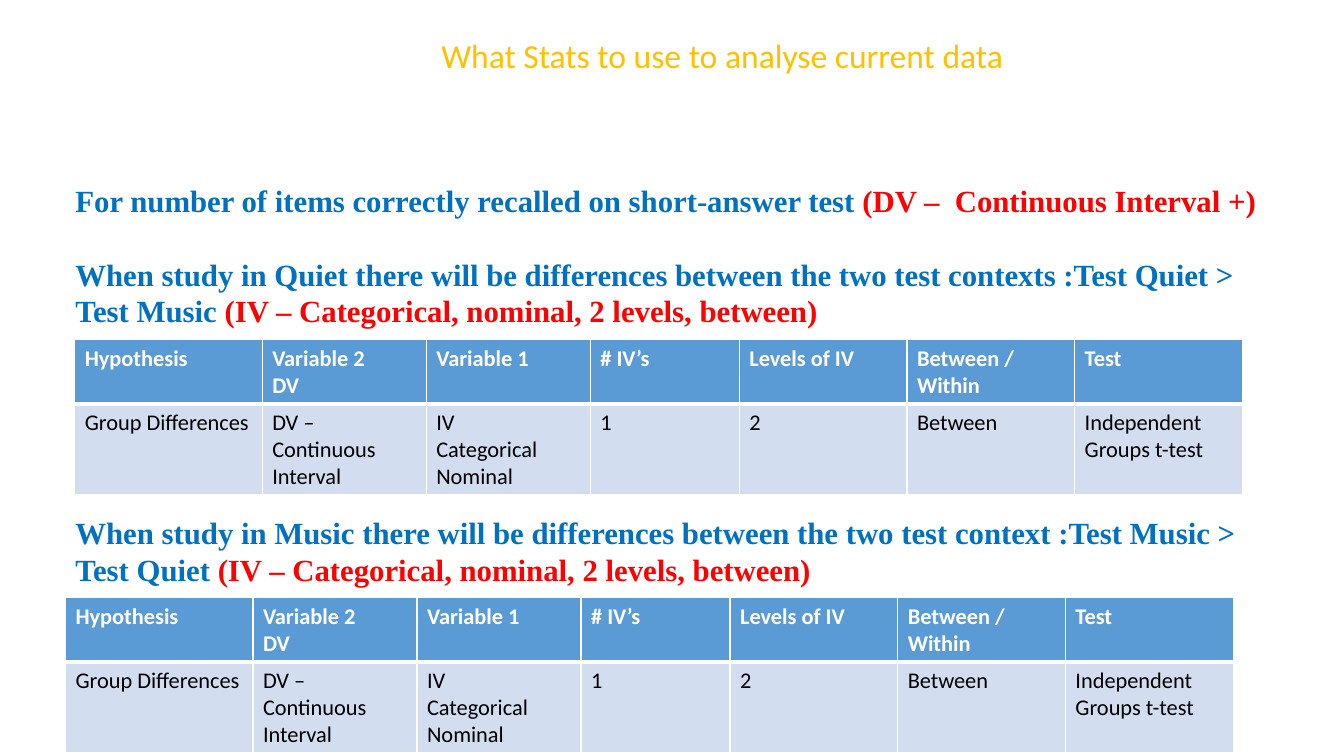
import pptx
import pptx.util
import pptx.dml.color
import pptx.enum.text
import pptx.oxml
import pptx.oxml.ns
from dataclasses import dataclass

Pt = pptx.util.Pt


@dataclass(frozen=True)
class Theme:
    title: str = "FFC000"
    hypothesis: str = "0070C0"
    variable: str = "FF0000"
    header_fill: str = "5B9BD5"
    body_fill: str = "D2DEEF"
    white: str = "FFFFFF"
    black: str = "000000"
    sans: str = "Calibri"
    serif: str = "Times New Roman"
    title_size: float = 24
    statement_size: float = 22
    statement_line: float = 26.4
    table_size: float = 16


theme = Theme()


def style(span, font, size, color, bold=False):
    span.font.name = font
    span.font.size = Pt(size)
    span.font.bold = bold
    span.font.color.rgb = pptx.dml.color.RGBColor.from_string(color)


def add_border(cell, side, width):
    properties = cell._tc.get_or_add_tcPr()
    properties.append(pptx.oxml.parse_xml(
        f'<a:{side} {pptx.oxml.ns.nsdecls("a")} w="{int(Pt(width))}">'
        f'<a:solidFill><a:srgbClr val="{theme.white}"/></a:solidFill></a:{side}>'
    ))


deck = pptx.Presentation()
deck.slide_width = Pt(960)
deck.slide_height = Pt(540)
page = deck.slides.add_slide(deck.slide_layouts[6])

statements = [
    (0, "For number of items correctly recalled on short-answer test ",
     "(DV –  Continuous Interval +)"),
    (1, "When study in Quiet there will be differences between the two test contexts :Test Quiet > Test Music ",
     "(IV – Categorical, nominal, 2 levels, between)"),
    (5, "When study in Music there will be differences between the two test context :Test Music > Test Quiet ",
     "(IV – Categorical, nominal, 2 levels, between)"),
]
box = page.shapes.add_textbox(Pt(46.8), Pt(126), Pt(874.8), Pt(300.2))
box.text_frame.word_wrap = True
for index, (lines_before, hypothesis, variable) in enumerate(statements):
    para = box.text_frame.paragraphs[0] if index == 0 else box.text_frame.add_paragraph()
    para.line_spacing = Pt(theme.statement_line)
    para.space_before = Pt(lines_before * theme.statement_line)
    for text, color in ((hypothesis, theme.hypothesis), (variable, theme.variable)):
        span = para.add_run()
        span.text = text
        style(span, theme.serif, theme.statement_size, color, bold=True)

title = page.shapes.add_textbox(Pt(275.8), Pt(21.6), Pt(480.2), Pt(65.5))
title.text_frame.word_wrap = True
title.text_frame.text = "What Stats to use to analyse current data"
para = title.text_frame.paragraphs[0]
para.alignment = pptx.enum.text.PP_ALIGN.CENTER
style(para.runs[0], theme.sans, theme.title_size, theme.title)

columns = [
    (133.9, "Hypothesis", "Group Differences"),
    (117.2, "Variable 2\nDV", "DV –\nContinuous Interval"),
    (117.2, "Variable 1", "IV\nCategorical Nominal"),
    (106.4, "# IV’s", "1"),
    (119.8, "Levels of IV", "2"),
    (119.8, "Between / Within", "Between"),
    (119.8, "Test", "Independent Groups t-test"),
]
rows = [
    (45.4, theme.header_fill, theme.white, True, {"lnL": 1, "lnR": 1, "lnT": 1, "lnB": 3}),
    (64.8, theme.body_fill, theme.black, False, {"lnL": 1, "lnR": 1, "lnT": 3, "lnB": 1}),
]
table_width = sum(width for width, *_ in columns)
table_height = sum(height for height, *_ in rows)

for left, top in ((53.4, 242.8), (46.8, 427)):
    table = page.shapes.add_table(
        len(rows), len(columns), Pt(left), Pt(top), Pt(table_width), Pt(table_height)
    ).table
    for column_index, (width, *texts) in enumerate(columns):
        table.columns[column_index].width = Pt(width)
        for row_index, (height, fill, color, bold, borders) in enumerate(rows):
            table.rows[row_index].height = Pt(height)
            cell = table.cell(row_index, column_index)
            for side, thickness in borders.items():
                add_border(cell, side, thickness)
            cell.fill.solid()
            cell.fill.fore_color.rgb = pptx.dml.color.RGBColor.from_string(fill)
            cell.text_frame.text = texts[row_index]
            for para in cell.text_frame.paragraphs:
                style(para.runs[0], theme.sans, theme.table_size, color, bold)

deck.save("out.pptx")
